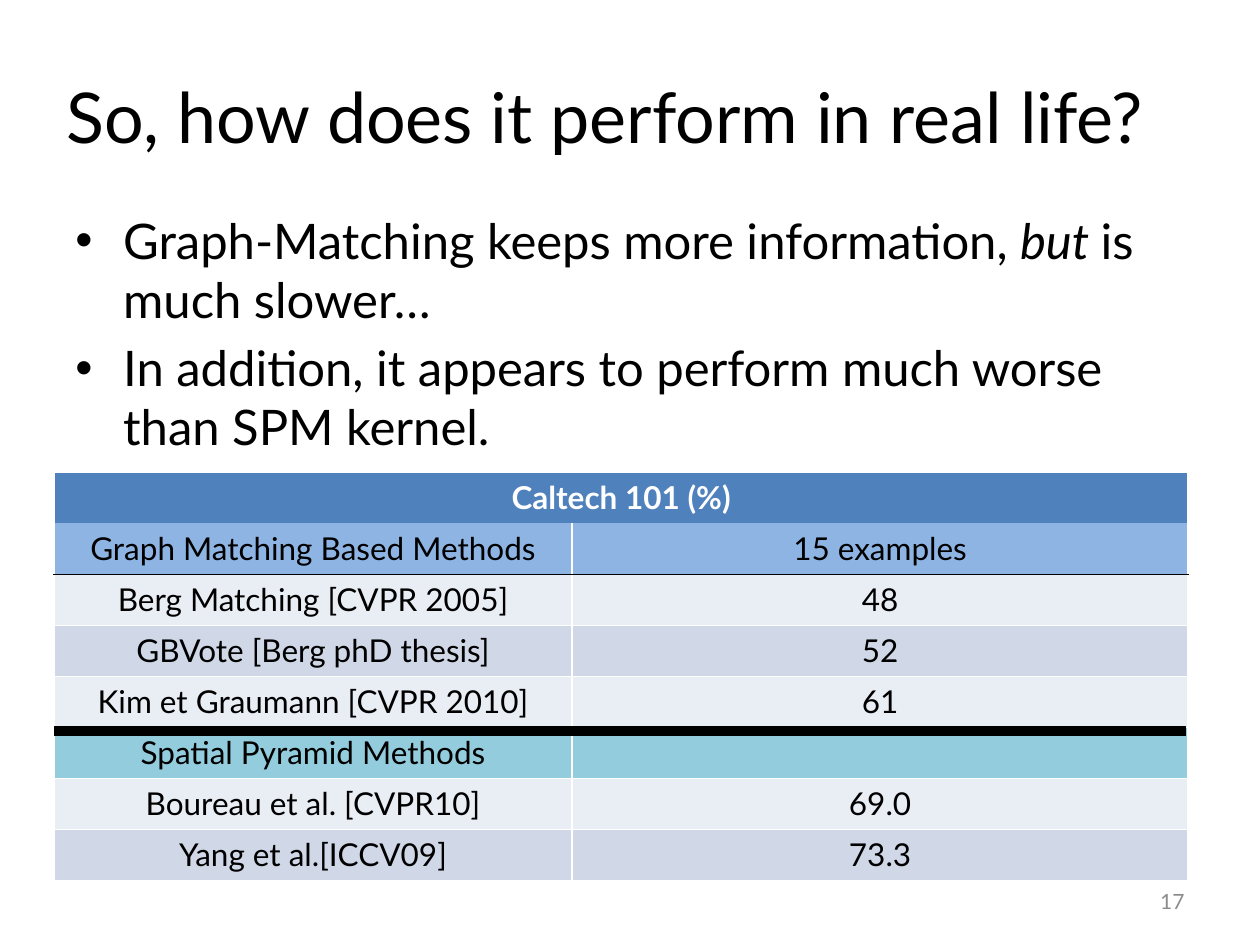
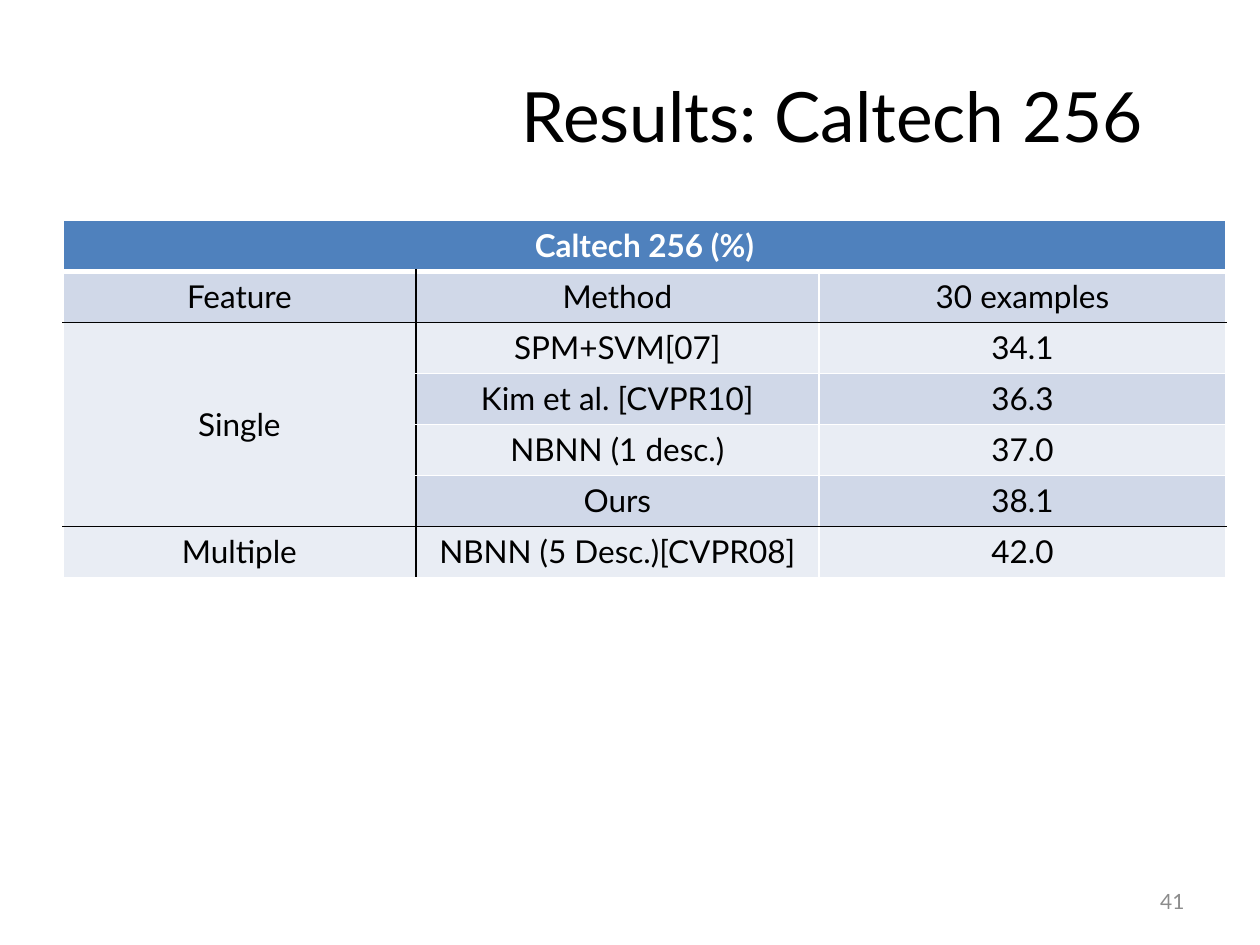
import pptx
import pptx.dml.color
import pptx.enum.shapes
import pptx.enum.text
import pptx.oxml.ns
import pptx.util
from lxml import etree
from pptx.util import Inches

# Shared look
FONT = "Lato"
BLACK, WHITE, GREY = "000000", "FFFFFF", "8C8C8C"
HEADER, SUBHEADER, TEAL = "4F81BD", "8EB4E3", "93CDDD"
LIGHT, DARK = "E9EDF4", "D0D8E8"
ROW_HEIGHT = 0.405
THIN_WHITE, THICK_WHITE, THIN_BLACK = (WHITE, 1), (WHITE, 3), (BLACK, 1)
ALIGN = pptx.enum.text.PP_ALIGN
MIDDLE = pptx.enum.text.MSO_ANCHOR.MIDDLE
qn = pptx.oxml.ns.qn


def colour(value):
    return pptx.dml.color.RGBColor.from_string(value)


def write(paragraph, text, size=18, color=BLACK, bold=False, italic=False, align=None):
    """Add a formatted run to a paragraph."""
    if align is not None:
        paragraph.alignment = align
    run = paragraph.add_run()
    run.text = text
    font = run.font
    font.name, font.size = FONT, pptx.util.Pt(size)
    font.bold, font.italic = bold, italic
    font.color.rgb = colour(color)


def add_box(slide, left, top, width, height, anchor=None):
    frame = slide.shapes.add_textbox(
        Inches(left), Inches(top), Inches(width), Inches(height)).text_frame
    frame.word_wrap = True
    if anchor is not None:
        frame.vertical_anchor = anchor
    return frame


def add_slide(presentation, title, number, title_size=40):
    """Start a slide with the shared title and page number."""
    slide = presentation.slides.add_slide(presentation.slide_layouts[6])
    title_frame = add_box(slide, -0.68, 0.6, 9.85, 0.63, MIDDLE)
    write(title_frame.paragraphs[0], title, size=title_size, align=ALIGN.RIGHT)
    number_frame = add_box(slide, 7.17, 6.95, 2.33, 0.4, MIDDLE)
    write(number_frame.paragraphs[0], str(number), size=12, color=GREY, align=ALIGN.RIGHT)
    return slide


def add_bullets(slide, bullets):
    """Each bullet is a list of (text, italic) parts."""
    frame = add_box(slide, 0.5, 1.62, 9, 4.95)
    for index, parts in enumerate(bullets):
        paragraph = frame.add_paragraph() if index else frame.paragraphs[0]
        properties = paragraph._p.get_or_add_pPr()
        properties.set("marL", str(Inches(0.38)))
        properties.set("indent", str(Inches(-0.38)))
        etree.SubElement(properties, qn("a:buFont"), typeface="Arial")
        etree.SubElement(properties, qn("a:buChar"), char="•")
        paragraph.space_before = pptx.util.Pt(5.6 if index else 0)
        for text, italic in parts:
            write(paragraph, text, size=28, italic=italic)


def set_borders(cell, **edges):
    """Set left, right, top and bottom as (colour, points), or None for no line."""
    properties = cell._tc.get_or_add_tcPr()
    for index, side in enumerate(("left", "right", "top", "bottom")):
        line = etree.Element(qn("a:ln" + side[0].upper()))
        if edges[side]:
            color, width = edges[side]
            line.set("w", str(pptx.util.Pt(width)))
            fill = etree.SubElement(line, qn("a:solidFill"))
            etree.SubElement(fill, qn("a:srgbClr"), val=color)
        else:
            etree.SubElement(line, qn("a:noFill"))
        properties.insert(index, line)


def add_results(slide, left, top, widths, rows, fills, rules_below, rules_right, merges=()):
    """Draw a table whose first row is a header across all columns."""
    frame = slide.shapes.add_table(
        len(rows), len(widths), Inches(left), Inches(top),
        Inches(sum(widths)), Inches(ROW_HEIGHT * len(rows)))
    table = frame.table
    table.first_row = table.horz_banding = False
    for column, width in zip(table.columns, widths):
        column.width = Inches(width)
    for row in table.rows:
        row.height = Inches(ROW_HEIGHT)
    for first, last in [((0, 0), (0, len(widths) - 1)), *merges]:
        table.cell(*first).merge(table.cell(*last))

    for row, texts in enumerate(rows):
        for column, text in enumerate(texts):
            cell = table.cell(row, column)
            if cell.is_spanned:
                continue
            cell.fill.solid()
            cell.fill.fore_color.rgb = colour(fills[row])
            cell.vertical_anchor = MIDDLE if cell.span_height > 1 else None
            if text:
                write(cell.text_frame.paragraphs[0], text, bold=row == 0,
                      color=WHITE if row == 0 else BLACK, align=ALIGN.CENTER)
            last_row = row + cell.span_height - 1
            last_column = column + cell.span_width - 1
            set_borders(
                cell,
                left=rules_right.get(column - 1, THIN_WHITE),
                right=rules_right.get(last_column, THIN_WHITE),
                top=rules_below.get(row - 1, THIN_WHITE),
                bottom=rules_below.get(last_row, THIN_WHITE))


def add_divider(slide, left, right, y, width):
    line = slide.shapes.add_connector(
        pptx.enum.shapes.MSO_CONNECTOR.STRAIGHT,
        Inches(left), Inches(y), Inches(right), Inches(y))
    line.line.color.rgb = colour(BLACK)
    line.line.width = pptx.util.Pt(width)
    etree.SubElement(line._element.spPr, qn("a:effectLst"))


def add_performance_slide(presentation):
    slide = add_slide(presentation, "So, how does it perform in real life?", 17)
    add_bullets(slide, [
        [("Graph-Matching keeps more information, ", False), ("but ", True),
         ("is much slower…", False)],
        [("In addition, it appears to perform much worse than SPM kernel.", False)],
    ])
    rows = [
        ("Caltech 101 (%)", ""),
        ("Graph Matching Based Methods", "15 examples"),
        ("Berg Matching [CVPR 2005]", "48"),
        ("GBVote [Berg phD thesis]", "52"),
        ("Kim et Graumann [CVPR 2010]", "61"),
        ("Spatial Pyramid Methods", ""),
        ("Boureau et al. [CVPR10]", "69.0"),
        ("Yang et al.[ICCV09]", "73.3"),
    ]
    fills = [HEADER, SUBHEADER, LIGHT, DARK, LIGHT, TEAL, LIGHT, DARK]
    add_results(slide, 0.43, 3.75, [4.11, 4.89], rows, fills,
                rules_below={0: None, 1: THIN_BLACK}, rules_right={})
    # Separates the two families of methods
    add_divider(slide, 0.43, 9.41, 5.8, 6)


def add_caltech_256_slide(presentation):
    slide = add_slide(presentation, "Results: Caltech 256", 41, title_size=39.6)
    rows = [
        ("Caltech 256 (%)", "", ""),
        ("Feature", "Method", "30 examples"),
        ("Single", "SPM+SVM[07]", "34.1"),
        ("", "Kim et al. [CVPR10]", "36.3"),
        ("", "NBNN (1 desc.)", "37.0"),
        ("", "Ours", "38.1"),
        ("Multiple", "NBNN (5 Desc.)[CVPR08]", "42.0"),
    ]
    fills = [HEADER, DARK, LIGHT, DARK, LIGHT, DARK, LIGHT]
    add_results(slide, 0.5, 1.75, [2.8, 3.2, 3.23], rows, fills,
                rules_below={0: THICK_WHITE, 1: THIN_BLACK, 5: THIN_BLACK},
                rules_right={0: THIN_BLACK}, merges=[((2, 0), (5, 0))])


def main():
    presentation = pptx.Presentation()
    presentation.slide_width, presentation.slide_height = Inches(10), Inches(7.5)
    add_performance_slide(presentation)
    add_caltech_256_slide(presentation)
    presentation.save("out.pptx")


if __name__ == "__main__":
    main()
